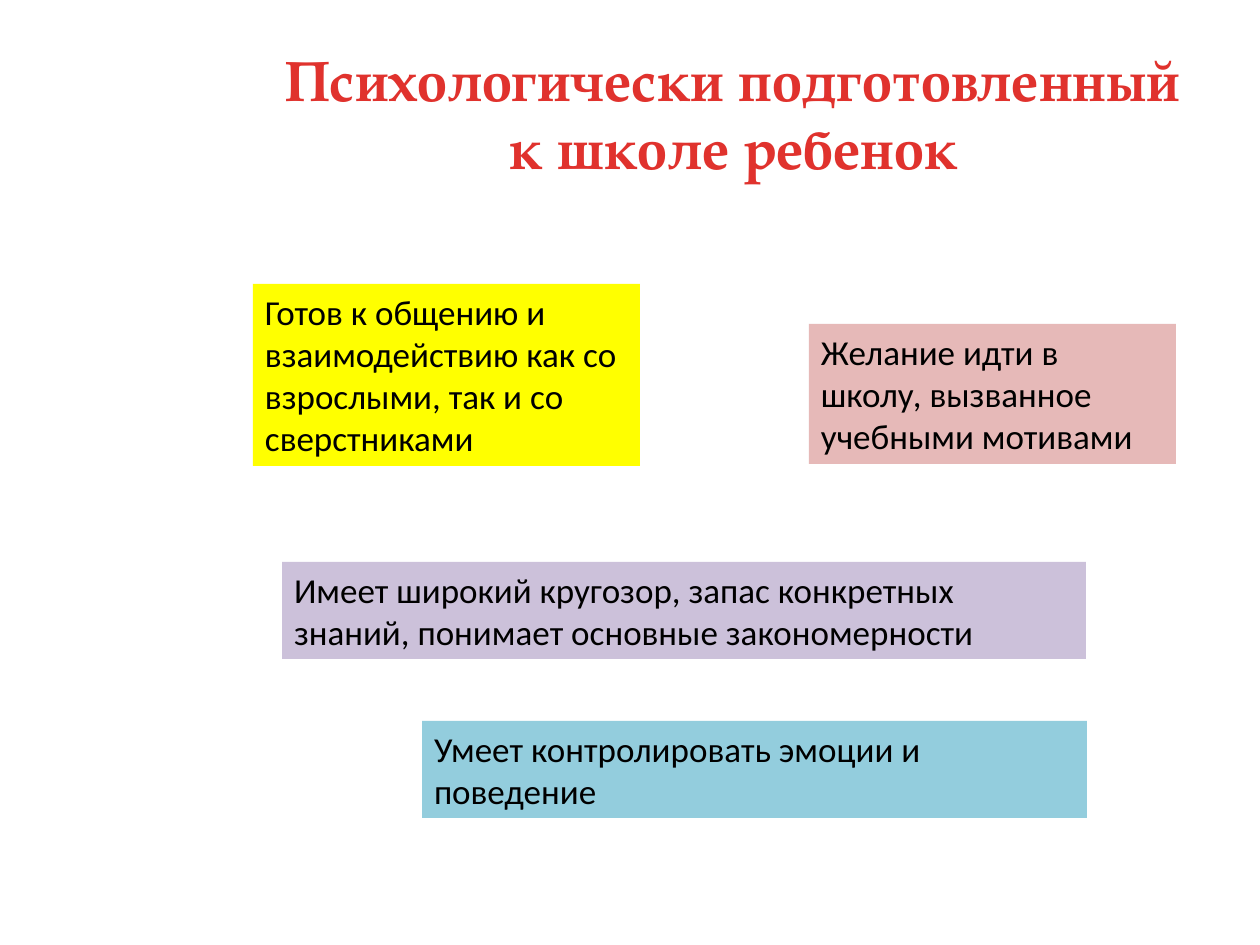
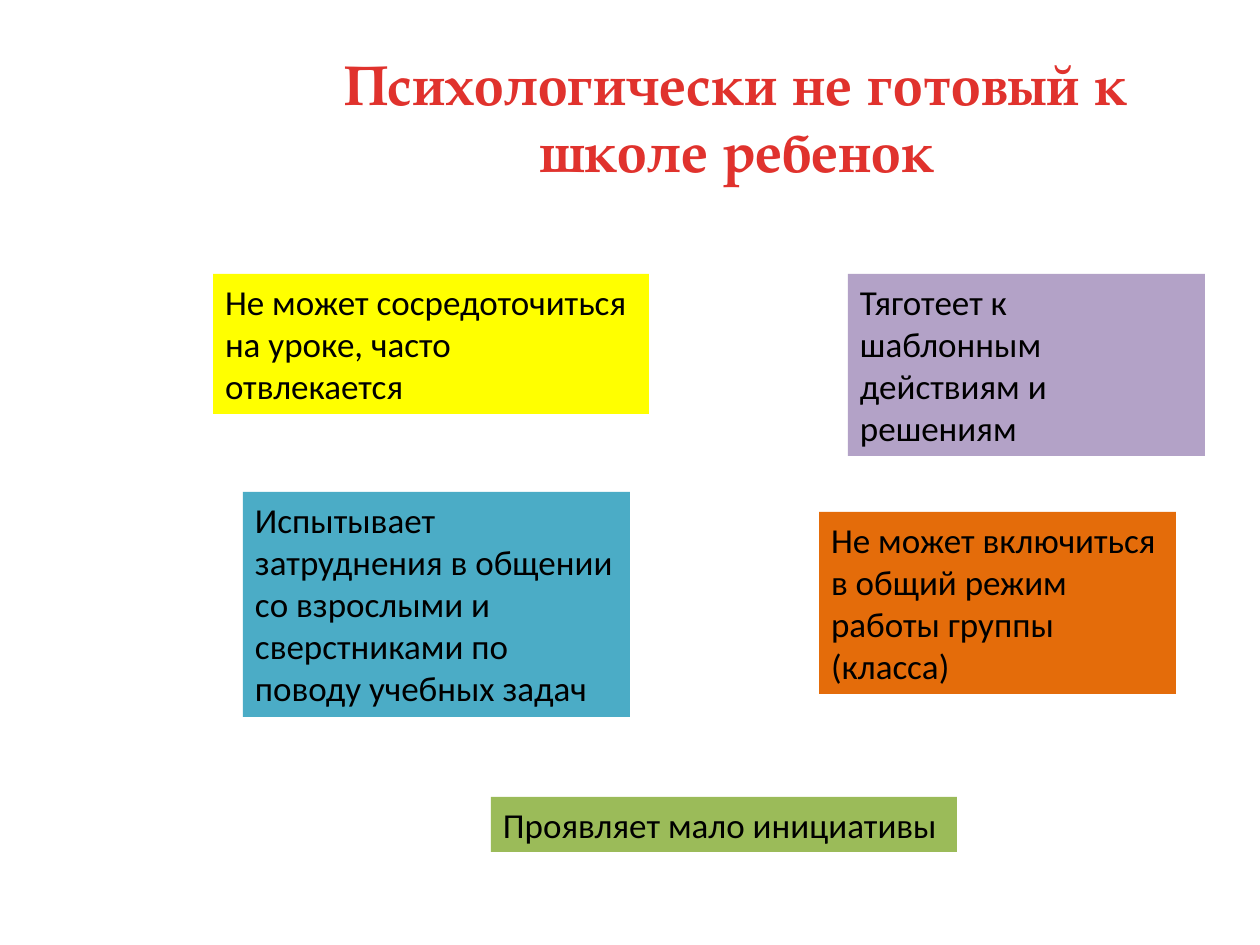
from pptx import Presentation
from pptx.dml.color import RGBColor
from pptx.enum import shapes, text

PX = 914400 // 126
COLORS = {
    "title": "E0322D", "text": "000000", "yellow": "FFFF00", "rose": "E6B9B8",
    "lilac": "CCC1DA", "sky": "93CDDD", "violet": "B3A2C7", "teal": "4BACC6",
    "orange": "E46C0A", "green": "9BBB59",
}

# Each slide: title, title top, title size, then boxes as (text, fill, left, top, width, height)
SLIDES = [
    ("Психологически подготовленный к школе ребенок", 273, 34, 32.4, [
        ("Готов к общению и взаимодействию как со взрослыми, так и со сверстниками",
         "yellow", 253, 284, 387, 182),
        ("Желание идти в школу, вызванное учебными мотивами",
         "rose", 809, 324, 367, 140),
        ("Имеет широкий кругозор, запас конкретных знаний, понимает основные закономерности",
         "lilac", 282, 562, 804, 97),
        ("Умеет контролировать эмоции и поведение",
         "sky", 422, 721, 665, 97),
    ]),
    ("Психологически не готовый к школе ребенок", 276, 38, 32, [
        ("Не может сосредоточиться на уроке, часто отвлекается",
         "yellow", 213, 274, 436, 140),
        ("Тяготеет к шаблонным действиям и решениям",
         "violet", 848, 274, 357, 182),
        ("Испытывает затруднения в общении со взрослыми и сверстниками по поводу учебных задач",
         "teal", 243, 492, 387, 225),
        ("Не может включиться в общий режим работы группы (класса)",
         "orange", 819, 512, 357, 182),
        ("Проявляет мало инициативы",
         "green", 491, 797, 466, 55),
    ]),
]


def place(sp, left, top, width, height):
    sp.left, sp.top, sp.width, sp.height = (v * PX for v in (left, top, width, height))


def write(sp, content, font="Calibri", size=20, color="text", bold=False, spacing=0,
          align=text.PP_ALIGN.LEFT, anchor=text.MSO_ANCHOR.TOP,
          fit=text.MSO_AUTO_SIZE.SHAPE_TO_FIT_TEXT, side=12):
    """Fill a shape with one paragraph; spacing is in 1/100 pt, side is the inset in px."""
    tf = sp.text_frame
    tf.word_wrap = True
    tf.auto_size = fit
    tf.vertical_anchor = anchor
    tf.margin_left = tf.margin_right = side * PX
    p = tf.paragraphs[0]
    p.alignment = align
    r = p.add_run()
    r.text = content
    r.font.name = font
    r.font.size = int(size * 12700)
    r.font.bold = bold
    r.font.color.rgb = RGBColor.from_string(COLORS[color])
    if spacing:
        r.font._element.set("spc", str(spacing))


prs = Presentation()
prs.slide_width, prs.slide_height = 1260 * PX, 945 * PX

for title, title_left, title_top, title_size, boxes in SLIDES:
    s = prs.slides.add_slide(prs.slide_layouts[5])
    place(s.shapes.title, title_left, title_top, 921, 157)
    write(s.shapes.title, title, font="TeX Gyre Pagella", size=title_size, color="title",
          bold=True, spacing=50, align=text.PP_ALIGN.CENTER,
          anchor=text.MSO_ANCHOR.MIDDLE, fit=text.MSO_AUTO_SIZE.NONE, side=6)

    for content, fill, *bounds in boxes:
        sp = s.shapes.add_shape(shapes.MSO_SHAPE.RECTANGLE, 0, 0, PX, PX)
        place(sp, *bounds)
        sp.shadow.inherit = False
        sp.fill.solid()
        sp.fill.fore_color.rgb = RGBColor.from_string(COLORS[fill])
        sp.line.fill.background()
        write(sp, content)

prs.save("out.pptx")
